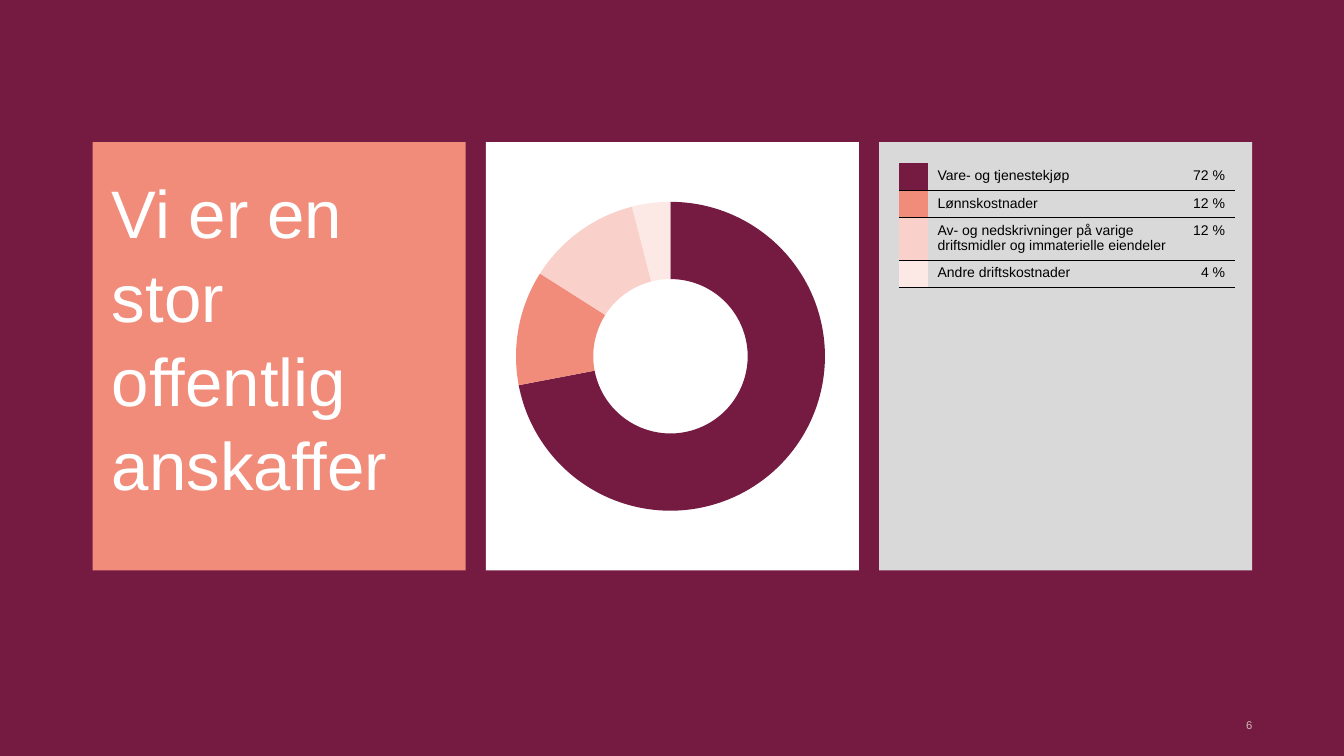
from lxml.etree import SubElement as Sub
from pptx import Presentation
from pptx.chart.data import CategoryChartData as Data
from pptx.dml.color import RGBColor as Rgb
from pptx.enum.chart import XL_CHART_TYPE as Kind
from pptx.enum.shapes import MSO_SHAPE as Shape
from pptx.enum.text import MSO_ANCHOR as Anchor, PP_ALIGN as Align
from pptx.oxml.ns import qn
from pptx.util import Inches, Pt

HUES = {"wine": "751B42", "coral": "F18C7B", "pink": "F9D1CA", "blush": "FCE8E5",
        "white": "FFFFFF", "grey": "D9D9D9", "black": "000000", "sand": "CCBFB2"}
FONT = "Arial"
TITLE = "Vi er en stor offentlig anskaffer"
PAGE = "6"
COSTS = [
    ("Vare- og tjenestekjøp", 72, "wine", 0.25),
    ("Lønnskostnader", 12, "coral", 0.25),
    ("Av- og nedskrivninger på varige driftsmidler og immaterielle eiendeler", 12, "pink", 0.42),
    ("Andre driftskostnader", 4, "blush", 0.25),
]
PANELS = ["coral", "white", "grey"]
COLS = [0.28, 2.52, 0.53]
WIDE, HIGH = 13.33, 7.5
LEFT, TOP, SIDE, TALL, GAP = 0.92, 1.41, 3.7, 4.25, 0.2
PAD = 0.21
PLAIN = "{2D5ABB26-0587-4C30-8999-92F81FD0307C}"


def hue(name):
    return Rgb.from_string(HUES[name])


def box(*sizes):
    return [Inches(size) for size in sizes]


def start(col):
    return LEFT + col * (SIDE + GAP)


def paint(fill, name):
    fill.solid()
    fill.fore_color.rgb = hue(name)


def style(font, size, name):
    font.name, font.size = FONT, Pt(size)
    font.color.rgb = hue(name)


def write(para, text, size, name, align=Align.LEFT):
    para.alignment = align
    run = para.add_run()
    run.text = text
    style(run.font, size, name)


def rule(cell):
    line = Sub(cell._tc.get_or_add_tcPr(), qn("a:lnB"), w=str(Pt(0.25)))
    fill = Sub(line, qn("a:solidFill"))
    Sub(fill, qn("a:srgbClr"), val=HUES["black"])


def add_panels(slide):
    for col, name in enumerate(PANELS):
        panel = slide.shapes.add_shape(Shape.RECTANGLE, *box(start(col), TOP, SIDE, TALL))
        panel.shadow.inherit = False
        paint(panel.fill, name)
        panel.line.fill.background()


def add_title(slide):
    title = slide.shapes.title
    title.left, title.top, title.width, title.height = box(1.11, TOP + PAD, 3.3, TALL - 2 * PAD)
    frame = title.text_frame
    frame.word_wrap = True
    frame.vertical_anchor = Anchor.TOP
    frame.margin_left = 0
    para = frame.paragraphs[0]
    para.line_spacing = 1.04
    write(para, TITLE, 48, "white")
    slide.shapes._spTree.append(title._element)


def add_ring(slide):
    data = Data()
    data.categories = [str(num + 1) for num in range(len(COSTS))]
    data.add_series("Series 1", [cost[1] for cost in COSTS])
    place = box(4.98, TOP + PAD, 3.34, TALL - 2 * PAD)
    chart = slide.shapes.add_chart(Kind.DOUGHNUT, *place, data).chart
    chart.has_title = chart.has_legend = False
    style(chart.font, 10, "black")
    for num, cost in enumerate(COSTS):
        part = chart.plots[0].series[0].points[num].format
        paint(part.fill, cost[2])
        part.line.fill.background()


def add_key(slide):
    highs = [cost[3] for cost in COSTS]
    place = box(start(2) + GAP, TOP + PAD, sum(COLS), sum(highs))
    table = slide.shapes.add_table(len(COSTS), len(COLS), *place).table
    table.first_row = table.horz_banding = False
    table._tbl.tblPr.find(qn("a:tableStyleId")).text = PLAIN
    for col, wide in zip(table.columns, COLS):
        col.width = Inches(wide)
    for row, (text, share, name, high) in zip(table.rows, COSTS):
        row.height = Inches(high)
        mark, label, value = row.cells
        for cell in row.cells:
            rule(cell)
            cell.fill.background()
        paint(mark.fill, name)
        Sub(mark.text_frame.paragraphs[0]._p, qn("a:endParaRPr"), sz="1000")
        write(label.text_frame.paragraphs[0], text, 10, "black")
        write(value.text_frame.paragraphs[0], f"{share} %", 10, "black", Align.RIGHT)


def add_page(slide):
    frame = slide.shapes.add_textbox(*box(11.37, 7.12, 1.05, 0.15)).text_frame
    frame.word_wrap = True
    frame.vertical_anchor = Anchor.MIDDLE
    frame.margin_right = 0
    write(frame.paragraphs[0], PAGE, 8, "sand", Align.RIGHT)


def main():
    deck = Presentation()
    deck.slide_width, deck.slide_height = box(WIDE, HIGH)
    slide = deck.slides.add_slide(deck.slide_layouts[5])
    paint(slide.background.fill, "wine")
    add_page(slide)
    add_panels(slide)
    add_title(slide)
    add_ring(slide)
    add_key(slide)
    deck.save("out.pptx")


if __name__ == "__main__":
    main()
